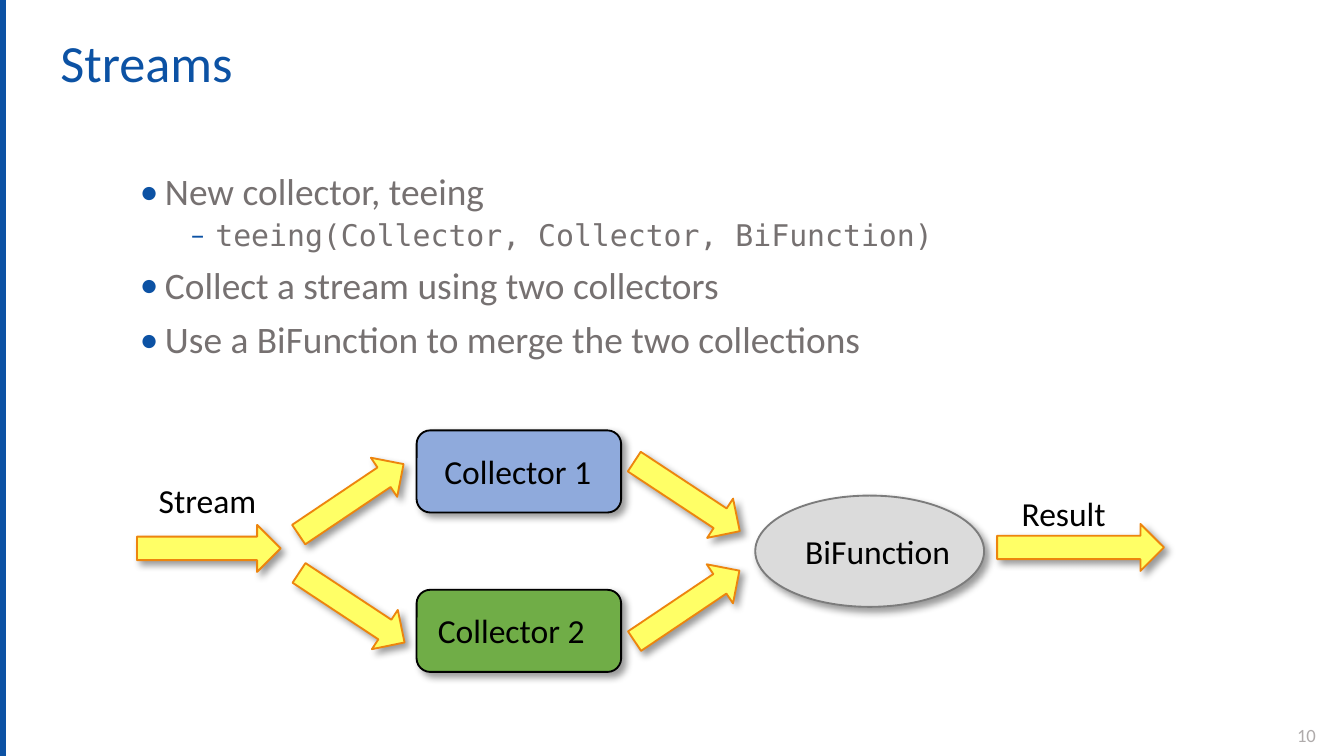
from lxml import etree
from pptx import Presentation
from pptx.dml.color import RGBColor
from pptx.enum.shapes import MSO_CONNECTOR, MSO_SHAPE
from pptx.enum.text import MSO_ANCHOR, MSO_AUTO_SIZE, PP_ALIGN
from pptx.oxml.ns import qn
from pptx.util import Pt

ARROW = MSO_SHAPE.RIGHT_ARROW
ROUND = MSO_SHAPE.ROUNDED_RECTANGLE
OVAL = MSO_SHAPE.OVAL
LINE = MSO_CONNECTOR.STRAIGHT
TOP, MIDDLE = MSO_ANCHOR.TOP, MSO_ANCHOR.MIDDLE
LEFT, CENTER, RIGHT = PP_ALIGN.LEFT, PP_ALIGN.CENTER, PP_ALIGN.RIGHT
FIXED = MSO_AUTO_SIZE.NONE


def color(code):
    """Turn a hex string into a colour."""
    return RGBColor.from_string(code)


def child(parent, tag, **attrs):
    """Add an XML child with the given attributes."""
    return etree.SubElement(parent, qn(tag), attrs)


class Deck:
    """Hold the style and the current slide."""

    sans, mono = "Calibri", "DejaVu Sans Mono"
    blue, gray, black = "0C52A4", "767171", "000000"
    yellow, orange = "FFFF66", "ED850E"

    def __init__(self, wide, high):
        """Start a deck with one slide."""
        self.deck = Presentation()
        self.deck.slide_width, self.deck.slide_height = Pt(wide), Pt(high)
        self.slide = self.deck.slides.add_slide(self.deck.slide_layouts[1])

    def place(self, shape, box):
        """Move a shape to a box."""
        shape.left, shape.top, shape.width, shape.height = map(Pt, box)

    def frame(self, shape, anchor):
        """Prepare the text frame of a shape."""
        frame = shape.text_frame
        frame.word_wrap, frame.auto_size = True, FIXED
        frame.vertical_anchor = anchor
        return frame

    def run(self, para, text, size, tint, face=sans):
        """Add one styled run."""
        run = para.add_run()
        run.text = text
        run.font.size, run.font.name = Pt(size), face
        run.font.color.rgb = color(tint)

    def title(self, text, box):
        """Fill the title."""
        shape = self.slide.shapes.title
        self.place(shape, box)
        para = self.frame(shape, MIDDLE).paragraphs[0]
        para.alignment, para.line_spacing = LEFT, 0.9
        self.run(para, text, 28, self.blue)

    def bullets(self, items, box):
        """Fill the body with a list of level and text."""
        shape = self.slide.placeholders[1]
        self.place(shape, box)
        frame = self.frame(shape, TOP)
        for i, (level, text) in enumerate(items):
            para = frame.add_paragraph() if i else frame.paragraphs[0]
            size, gap, mark, edge, face = (
                (16, 3.8, "‒", 40.5, self.mono) if level
                else (20, 7.5, "•", 13.5, self.sans))
            props = para._p.get_or_add_pPr()
            props.set("marL", str(Pt(edge)))
            props.set("indent", str(Pt(-13.5)))
            child(child(props, "a:buClr"), "a:srgbClr", val=self.blue)
            child(props, "a:buFont", typeface=self.sans)
            child(props, "a:buChar", char=mark)
            para.level, para.alignment, para.line_spacing = level, LEFT, 0.9
            para.space_before = Pt(gap if i else 0)
            self.run(para, text, size, self.gray, face)

    def label(self, text, box, align=CENTER, size=18, tint=black, anchor=TOP):
        """Add a text box."""
        shape = self.slide.shapes.add_textbox(*map(Pt, box))
        para = self.frame(shape, anchor).paragraphs[0]
        para.alignment = align
        self.run(para, text, size, tint)

    def shape(self, kind, box, fill, edge):
        """Add a filled shape with a soft shadow."""
        shape = self.slide.shapes.add_shape(kind, *map(Pt, box))
        shape.fill.solid()
        shape.fill.fore_color.rgb = color(fill)
        shape.line.color.rgb, shape.line.width = color(edge), Pt(1)
        shape.shadow.inherit = False
        glow = child(shape._element.spPr.find(qn("a:effectLst")),
                     "a:outerShdw", blurRad=str(Pt(4)), dist=str(Pt(3)),
                     dir="2700000", algn="tl", rotWithShape="0")
        child(child(glow, "a:srgbClr", val=self.black), "a:alpha", val="40000")
        return shape

    def arrow(self, left, top, width, turn=0):
        """Add a yellow block arrow."""
        box = (left, top, width, 25.2)
        self.shape(ARROW, box, self.yellow, self.orange).rotation = turn

    def stripe(self, x, high):
        """Add the line down the slide edge."""
        line = self.slide.shapes.add_connector(
            LINE, Pt(x), Pt(0), Pt(x), Pt(high))
        line.line.color.rgb, line.line.width = color(self.blue), Pt(4)
        child(line._element.spPr, "a:effectLst")


def main():
    """Build the slide."""
    deck = Deck(720, 405)
    deck.stripe(1.5, 405)
    deck.title("Streams", (25.2, 21.6, 584.6, 26.6))
    deck.bullets([
        (0, "New collector, teeing"),
        (1, "teeing(Collector, Collector, BiFunction)"),
        (0, "Collect a stream using two collectors"),
        (0, "Use a BiFunction to merge the two collections"),
    ], (67.7, 89.3, 585.4, 126.7))
    deck.label("10", (550, 383, 162, 21.6), RIGHT, 10, "AFABAB", MIDDLE)

    deck.arrow(73.4, 281.2, 77)
    for top, fill in ((230.6, "8FAADC"), (316, "70AD47")):
        deck.shape(ROUND, (223.2, top, 109.6, 44), fill, deck.black)
    for left, top, turn in ((154.3, 254.9, -33.9), (154.6, 313, 33.4),
                            (334.2, 312, -33.9), (334.2, 253.4, 33.4)):
        deck.arrow(left, top, 67.7, turn)
    deck.shape(OVAL, (404.6, 265.5, 122.6, 59.6), "DBDBDB", "7C7C7C")
    deck.arrow(534.2, 280.7, 89.4)

    deck.label("Collector 1", (231, 237.8, 100, 29), LEFT)
    deck.label("Collector 2", (227.5, 323.4, 103.7, 29), LEFT)
    deck.label("BiFunction", (419.8, 280.8, 100.8, 29))
    deck.label("Stream", (73.4, 253.4, 75.6, 29))
    deck.label("Result", (534.2, 260.6, 71.3, 29))
    deck.deck.save("out.pptx")


if __name__ == "__main__":
    main()
